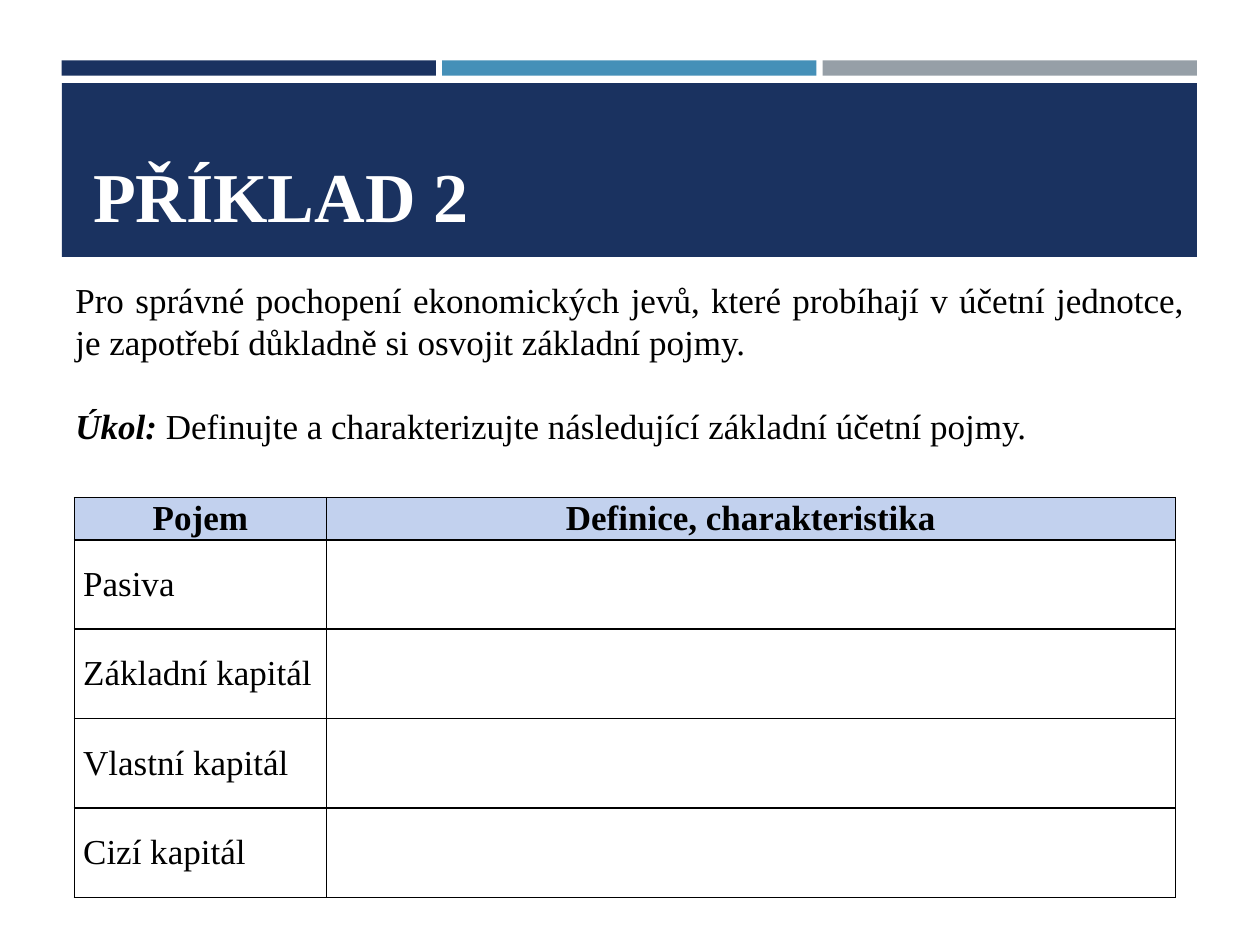
from pptx import Presentation
from pptx.dml.color import RGBColor
from pptx.enum.shapes import MSO_SHAPE
from pptx.enum.text import MSO_ANCHOR, PP_ALIGN
from pptx.oxml import parse_xml
from pptx.oxml.ns import nsdecls
from pptx.util import Inches, Pt

FONT = "Times New Roman"
NAVY, BLUE, GREY = "1A3260", "4590B8", "969FA7"
BLACK, WHITE, HEADER_FILL = "000000", "FFFFFF", "C2D1EE"

TITLE = "PŘÍKLAD 2"
INTRO = [
    [("Pro správné pochopení ekonomických jevů, které probíhají v účetní jednotce, "
      "je zapotřebí důkladně si osvojit základní pojmy.", False)],
    [("Úkol:", True),
     (" Definujte a charakterizujte následující základní účetní pojmy.", False)],
]
HEADER = ("Pojem", "Definice, charakteristika")
TERMS = ["Pasiva", "Základní kapitál", "Vlastní kapitál", "Cizí kapitál"]
COLUMN_WIDTHS = (2, 6.74)
HEADER_HEIGHT, ROW_HEIGHT = 0.33, 0.71
BAND_LEFT, BAND_WIDTH, STRIPE_GAP = 0.49, 9.01, 0.05


def color(value):
    return RGBColor.from_string(value)


def style(font, size, value, bold=None):
    font.name, font.size, font.bold = FONT, Pt(size), bold
    font.color.rgb = color(value)


def add_bar(page, left, top, width, height, fill):
    bar = page.shapes.add_shape(MSO_SHAPE.RECTANGLE, Inches(left), Inches(top),
                                Inches(width), Inches(height))
    bar.shadow.inherit = False
    bar.fill.solid()
    bar.fill.fore_color.rgb = color(fill)
    bar.line.fill.background()


def add_header(page):
    stripes = (NAVY, BLUE, GREY)
    width = (BAND_WIDTH - STRIPE_GAP * (len(stripes) - 1)) / len(stripes)
    for index, fill in enumerate(stripes):
        add_bar(page, BAND_LEFT + index * (width + STRIPE_GAP), 0.48, width, 0.12, fill)
    add_bar(page, BAND_LEFT, 0.66, BAND_WIDTH, 1.38, NAVY)

    title = page.shapes.title
    page.shapes._spTree.append(title._element)
    title.left, title.top = Inches(0.64), Inches(0.75)
    title.width, title.height = Inches(8.74), Inches(1.18)
    title.text = TITLE
    title.text_frame.vertical_anchor = MSO_ANCHOR.BOTTOM
    para = title.text_frame.paragraphs[0]
    para.alignment = PP_ALIGN.LEFT
    style(para.font, 40, WHITE, True)


def add_intro(page):
    box = page.shapes.add_textbox(Inches(0.5), Inches(2.16), Inches(9), Inches(1.45))
    frame = box.text_frame
    frame.word_wrap = True
    for index, spans in enumerate(INTRO):
        para = frame.add_paragraph() if index else frame.paragraphs[0]
        para.alignment = PP_ALIGN.JUSTIFY
        para.space_before = Pt(24 if index else 0)
        style(para.font, 20, BLACK)
        for text, strong in spans:
            span = para.add_run()
            span.text = text
            style(span.font, 20, BLACK, strong)
            span.font.italic = strong


def add_borders(cell):
    properties = cell._tc.get_or_add_tcPr()
    for index, side in enumerate(("lnL", "lnR", "lnT", "lnB")):
        properties.insert(index, parse_xml(
            f'<a:{side} {nsdecls("a")} w="12700"><a:solidFill>'
            f'<a:srgbClr val="{BLACK}"/></a:solidFill></a:{side}>'))


def fill_cell(cell, text, is_header):
    cell.margin_left = cell.margin_right = Inches(0.07)
    cell.margin_top = cell.margin_bottom = 0
    cell.vertical_anchor = MSO_ANCHOR.MIDDLE
    cell.text = text
    para = cell.text_frame.paragraphs[0]
    para.alignment = PP_ALIGN.CENTER if is_header else PP_ALIGN.LEFT
    para.space_before = para.space_after = Pt(6)
    style(para.font, 20, BLACK, is_header)
    if is_header:
        cell.fill.solid()
        cell.fill.fore_color.rgb = color(HEADER_FILL)
    else:
        cell.fill.background()
    add_borders(cell)


def add_terms_table(page):
    rows = [HEADER] + [(term, "") for term in TERMS]
    heights = [HEADER_HEIGHT] + [ROW_HEIGHT] * len(TERMS)
    table = page.shapes.add_table(len(rows), len(HEADER), Inches(0.59), Inches(3.95),
                                  Inches(sum(COLUMN_WIDTHS)), Inches(sum(heights))).table
    for column, width in zip(table.columns, COLUMN_WIDTHS):
        column.width = Inches(width)
    for row_index, (texts, height) in enumerate(zip(rows, heights)):
        table.rows[row_index].height = Inches(height)
        for column_index, text in enumerate(texts):
            fill_cell(table.cell(row_index, column_index), text, row_index == 0)


def main():
    """Build the accounting terms exercise slide."""
    deck = Presentation()
    deck.slide_width, deck.slide_height = Inches(10), Inches(7.5)
    page = deck.slides.add_slide(deck.slide_layouts[5])
    add_header(page)
    add_intro(page)
    add_terms_table(page)
    deck.save("out.pptx")


if __name__ == "__main__":
    main()
